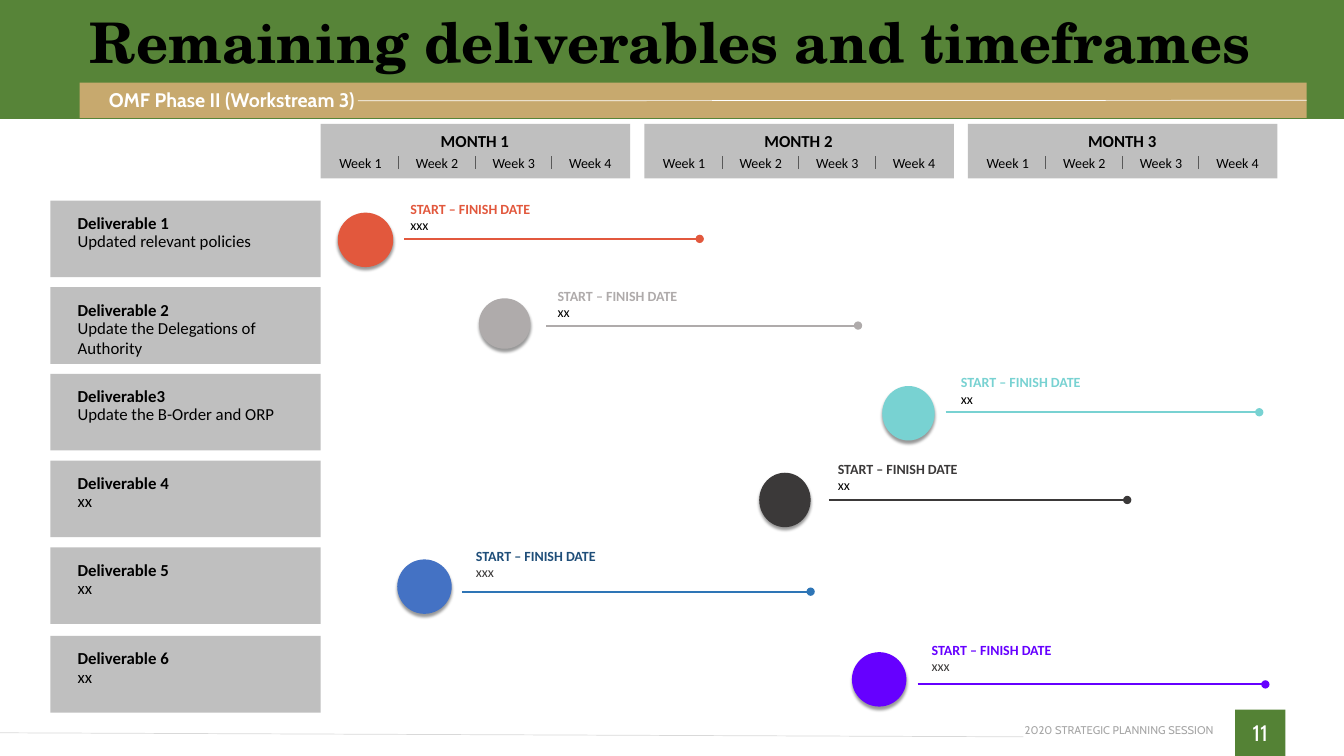
from lxml.etree import SubElement
from pptx import Presentation
from pptx.dml.color import RGBColor
from pptx.enum.shapes import MSO_CONNECTOR, MSO_SHAPE
from pptx.enum.text import MSO_ANCHOR, PP_ALIGN
from pptx.oxml.ns import qn
from pptx.util import Pt

PX = 9144
GREEN, GOLD, GREY = "548235", "C7A96E", "BFBFBF"
BLACK, WHITE, DARK = "000000", "FFFFFF", "3B3939"
LEFT, MID, RIGHT = PP_ALIGN.LEFT, PP_ALIGN.CENTER, PP_ALIGN.RIGHT

# top, title, detail
CARDS = [
    (199, "Deliverable 1", "Updated relevant policies"),
    (285, "Deliverable 2", "Update the Delegations of Authority"),
    (371, "Deliverable3", "Update the B-Order and ORP"),
    (457, "Deliverable 4", "xx"),
    (543, "Deliverable 5", "xx"),
    (631, "Deliverable 6", "xx"),
]
# dot box, line (start, end, y), label (x, y), note, dot, line, label and note colours
TASKS = [
    ((335, 211, 55, 54), (401, 694, 237), (407, 199), "xxx",
     "E2583D", "E2583D", "E2583D", BLACK),
    ((475, 296, 51, 50), (542, 851, 323), (553, 285), "xx",
     "AFABAB", "AFABAB", "AFABAB", BLACK),
    ((875, 383, 52, 54), (938, 1249, 409), (953, 371), "xx",
     "78D2D2", "78D2D2", "78D2D2", BLACK),
    ((753, 469, 51, 54), (822, 1118, 496), (831, 457), "xx",
     DARK, DARK, DARK, BLACK),
    ((394, 555, 54, 54), (458, 804, 587), (472, 543), "xxx",
     "4472C4", "2E75B6", "1F4E79", DARK),
    ((845, 647, 54, 54), (910, 1255, 679), (924, 636), "xxx",
     "6600FF", "6600FF", "6600FF", DARK),
]


def paint(target, color):
    """Apply a hex colour to a fill or a font."""
    if hasattr(target, "solid"):
        target.solid()
        target.fore_color.rgb = RGBColor.from_string(color)
    else:
        target.color.rgb = RGBColor.from_string(color)


def shape(slide, box, color, kind=MSO_SHAPE.RECTANGLE):
    """Add a flat shape without outline."""
    item = slide.shapes.add_shape(kind, *(v * PX for v in box))
    paint(item.fill, color)
    item.line.fill.background()
    item.shadow.inherit = False
    return item


def text(slide, box, words, size, color=BLACK, bold=False, font="Calibri",
         align=LEFT, anchor=MSO_ANCHOR.TOP):
    """Add a text box without insets."""
    frame = slide.shapes.add_textbox(*(v * PX for v in box)).text_frame
    frame.word_wrap = True
    frame.margin_left = frame.margin_right = 0
    frame.margin_top = frame.margin_bottom = 0
    frame.vertical_anchor = anchor
    para = frame.paragraphs[0]
    para.text = words
    para.alignment = align
    para.font.name = font
    para.font.size = Pt(size)
    para.font.bold = bold
    paint(para.font, color)
    return para


def line(slide, ends, color, width=0.5, tip=False):
    """Add a straight line, with a round tip if asked."""
    item = slide.shapes.add_connector(
        MSO_CONNECTOR.STRAIGHT, *(v * PX for v in ends))
    paint(item.line.fill, color)
    item.line.width = Pt(width)
    props = item.element.spPr
    if tip:
        SubElement(props.find(qn("a:ln")), qn("a:tailEnd"), type="oval")
    SubElement(props, qn("a:effectLst"))
    return item


def dot(slide, box, color):
    """Add a circle with a soft shadow below it."""
    item = shape(slide, box, color, MSO_SHAPE.OVAL)
    effect = item.element.spPr.find(qn("a:effectLst"))
    shade = SubElement(effect, qn("a:outerShdw"), blurRad="25400",
                       dist="25400", dir="5400000", rotWithShape="0")
    tint = SubElement(shade, qn("a:srgbClr"), val=BLACK)
    SubElement(tint, qn("a:alpha"), val="40000")


def header(slide):
    """Draw the title band and the subtitle bar."""
    band = shape(slide, (0, 0, 1333, 118), GREEN)
    tint = band.element.spPr.find(qn("a:solidFill"))[0]
    SubElement(tint, qn("a:alpha"), val="98000")
    bar = shape(slide, (79, 82, 1217, 35), GOLD)
    text(slide, (108, 87, 348, 24), "OMF Phase II (Workstream 3)", 14, WHITE,
         True, "Cabin", anchor=MSO_ANCHOR.MIDDLE)
    rule = line(slide, (355, 100, 1296, 100), WHITE)
    rule.end_connect(bar, 3)
    title = text(slide, (89, 0, 1235, 90), "Remaining deliverables and timeframes",
                 40, BLACK, True, "TeX Gyre Schola", anchor=MSO_ANCHOR.MIDDLE)
    title.line_spacing = 0.9


def footer(slide):
    """Draw the page number, the session name and the rule."""
    shape(slide, (1225, 704, 50, 46), GREEN)
    text(slide, (1225, 704, 50, 46), "11", 16, WHITE, font="Cabin",
         align=MID, anchor=MSO_ANCHOR.MIDDLE)
    text(slide, (1015, 718, 189, 13), "2020 STRATEGIC PLANNING SESSION", 8,
         "A6A6A6", font="Cabin", align=RIGHT, anchor=MSO_ANCHOR.MIDDLE)
    line(slide, (1015, 731, 0, 727), "D9D9D9")


def month(slide, index):
    """Draw one month with its four weeks."""
    left = 318 + 321 * index
    shape(slide, (left, 123, 307, 54), GREY)
    text(slide, (left + 97, 130, 112, 20), f"MONTH {index + 1}", 12,
         bold=True, align=MID)
    for week in range(4):
        start = left + 7 + 76 * week
        text(slide, (start, 153, 65, 17), f"Week {week + 1}", 10, align=MID)
        if week:
            line(slide, (start - 6, 155, start - 6, 168), "595959")


def card(slide, top, title, detail):
    """Draw one deliverable card."""
    shape(slide, (50, top, 268, 76), GREY)
    text(slide, (77, top + 12, 118, 20), title, 12, bold=True)
    text(slide, (77, top + 30, 214, 40), detail, 12)


def task(slide, box, span, spot, note, fill, stroke, ink, tone):
    """Draw one task on the timeline."""
    start, end, level = span
    left, top = spot
    line(slide, (start, level, end, level), stroke, 1.5, True)
    dot(slide, box, fill)
    text(slide, (left, top, 214, 17), "START – FINISH DATE", 10, ink, True)
    text(slide, (left, top + 16, 269, 17), note, 10, tone)


def main():
    """Build and save the slide."""
    deck = Presentation()
    deck.slide_width, deck.slide_height = 1333 * PX, 750 * PX
    slide = deck.slides.add_slide(deck.slide_layouts[6])
    footer(slide)
    header(slide)
    for index in range(3):
        month(slide, index)
    for row in CARDS:
        card(slide, *row)
    for row in TASKS:
        task(slide, *row)
    deck.save("out.pptx")


if __name__ == "__main__":
    main()
